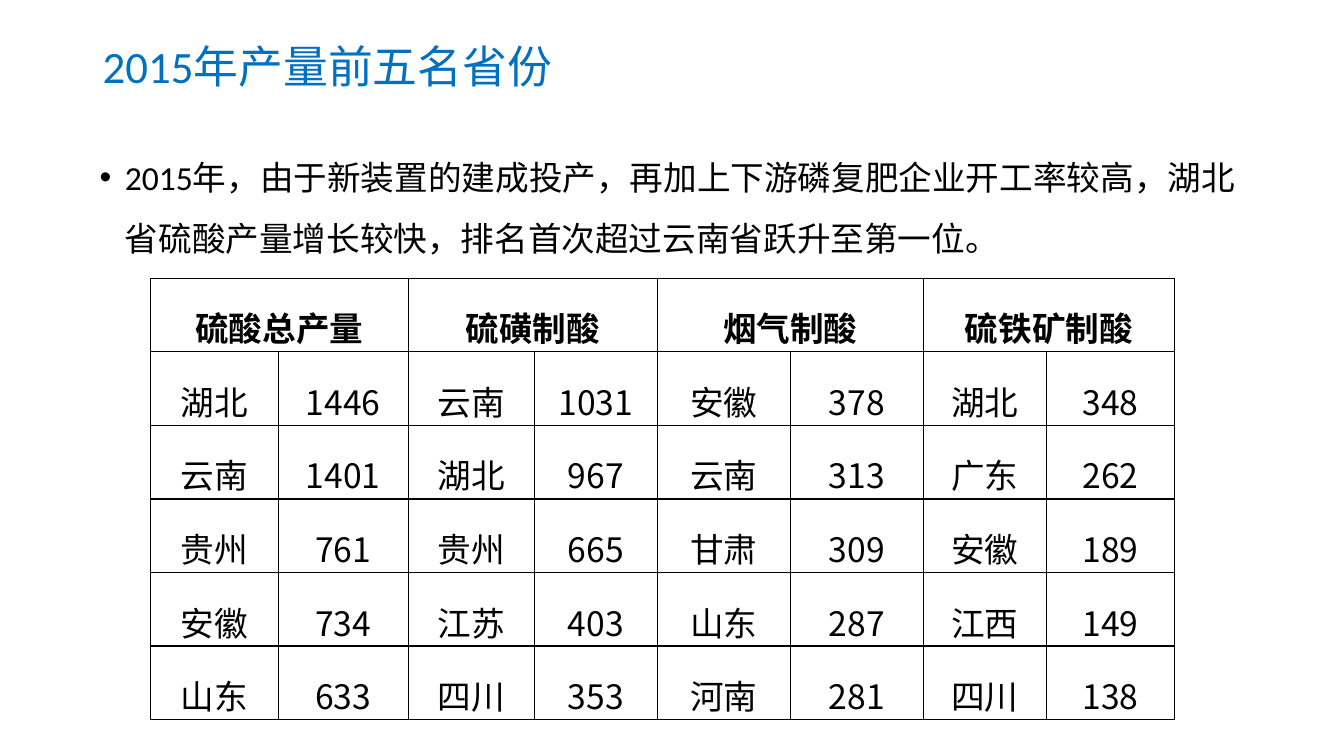
from lxml import etree
from pptx import Presentation
from pptx.dml.color import RGBColor
from pptx.enum import text
from pptx.oxml import ns
from pptx.util import Inches, Pt

# Content
TITLE = "2015年产量前五名省份"
SUMMARY = ("2015年，由于新装置的建成投产，再加上下游磷复肥企业开工率较高，"
           "湖北省硫酸产量增长较快，排名首次超过云南省跃升至第一位。")
RANKINGS = {
    "硫酸总产量": [("湖北", 1446), ("云南", 1401), ("贵州", 761), ("安徽", 734), ("山东", 633)],
    "硫磺制酸": [("云南", 1031), ("湖北", 967), ("贵州", 665), ("江苏", 403), ("四川", 353)],
    "烟气制酸": [("安徽", 378), ("云南", 313), ("甘肃", 309), ("山东", 287), ("河南", 281)],
    "硫铁矿制酸": [("湖北", 348), ("广东", 262), ("安徽", 189), ("江西", 149), ("四川", 138)],
}
COLUMN_WIDTHS = [1.27, 1.29, 1.25, 1.22, 1.32, 1.32, 1.22, 1.27]
ROW_HEIGHT = 0.73  # holds one 24 pt line at 1.5 spacing
COLORS = {"title": "0070C0", "text": "000000", "border": "000000"}
CJK_FONT = "Noto Sans CJK SC"


def write(frame, words, color, font, east_asian, line_spacing, size=24, bold=False):
    paragraph = frame.paragraphs[0]
    paragraph.line_spacing = line_spacing
    run = paragraph.add_run()
    run.text = words
    for name, value in {"name": font, "size": Pt(size), "bold": bold}.items():
        setattr(run.font, name, value)
    run.font.color.rgb = RGBColor.from_string(COLORS[color])
    properties = run._r.get_or_add_rPr()
    etree.SubElement(properties, ns.qn("a:ea"), typeface=east_asian)
    return paragraph


def add_text(slide, box, *content, **style):
    frame = slide.shapes.add_textbox(*map(Inches, box)).text_frame
    frame.word_wrap = True
    return write(frame, *content, **style)


def add_bullet(paragraph):
    properties = paragraph._p.get_or_add_pPr()
    properties.set("marL", str(Inches(0.25)))
    properties.set("indent", str(Inches(-0.25)))
    etree.SubElement(properties, ns.qn("a:buFont"), typeface="Arial")
    etree.SubElement(properties, ns.qn("a:buChar"), char="•")


def format_cell(cell):
    for name, value in {"margin_left": Inches(0.07), "margin_right": Inches(0.07),
                        "margin_top": 0, "margin_bottom": 0,
                        "vertical_anchor": text.MSO_ANCHOR.MIDDLE}.items():
        setattr(cell, name, value)
    cell.fill.background()
    properties = cell._tc.get_or_add_tcPr()
    for position, side in enumerate(("lnL", "lnR", "lnT", "lnB")):
        line = etree.Element(ns.qn(f"a:{side}"), w=str(Pt(1)))
        fill = etree.SubElement(line, ns.qn("a:solidFill"))
        etree.SubElement(fill, ns.qn("a:srgbClr"), val=COLORS["border"])
        properties.insert(position, line)


def write_cell(cell, words, font, bold=False):
    paragraph = write(cell.text_frame, words, "text", font, CJK_FONT, 1.5, bold=bold)
    paragraph.alignment = text.PP_ALIGN.CENTER


def add_rankings(slide):
    row_count = 1 + max(map(len, RANKINGS.values()))
    frame = slide.shapes.add_table(
        row_count, len(COLUMN_WIDTHS), Inches(1.49), Inches(2.76),
        Inches(sum(COLUMN_WIDTHS)), Inches(ROW_HEIGHT * row_count))
    table = frame.table
    table.first_row = table.horz_banding = False
    for column, width in zip(table.columns, COLUMN_WIDTHS):
        column.width = Inches(width)
    for row in table.rows:
        row.height = Inches(ROW_HEIGHT)
    for cell in table.iter_cells():
        format_cell(cell)

    # Each process spans a province column and an output column
    for group, (process, ranking) in enumerate(RANKINGS.items()):
        left = 2 * group
        header = table.cell(0, left)
        header.merge(table.cell(0, left + 1))
        write_cell(header, process, "Cabin", bold=True)
        for row, (province, output) in enumerate(ranking, start=1):
            write_cell(table.cell(row, left), province, "Cabin")
            write_cell(table.cell(row, left + 1), str(output), CJK_FONT)


def main():
    presentation = Presentation()
    presentation.slide_width = Inches(13.33)
    presentation.slide_height = Inches(7.5)
    slide = presentation.slides.add_slide(presentation.slide_layouts[6])

    # Heading and summary
    add_text(slide, (0.92, 0.4, 11.5, 1.07), TITLE, "title", "Calibri", "Calibri", 0.9, size=32)
    summary = add_text(slide, (0.89, 1.31, 11.5, 1.18), SUMMARY, "text", "Calibri", "Calibri", 1.5)
    summary.space_before = Pt(10)
    add_bullet(summary)

    # Top five provinces by process
    add_rankings(slide)
    presentation.save("out.pptx")


if __name__ == "__main__":
    main()
